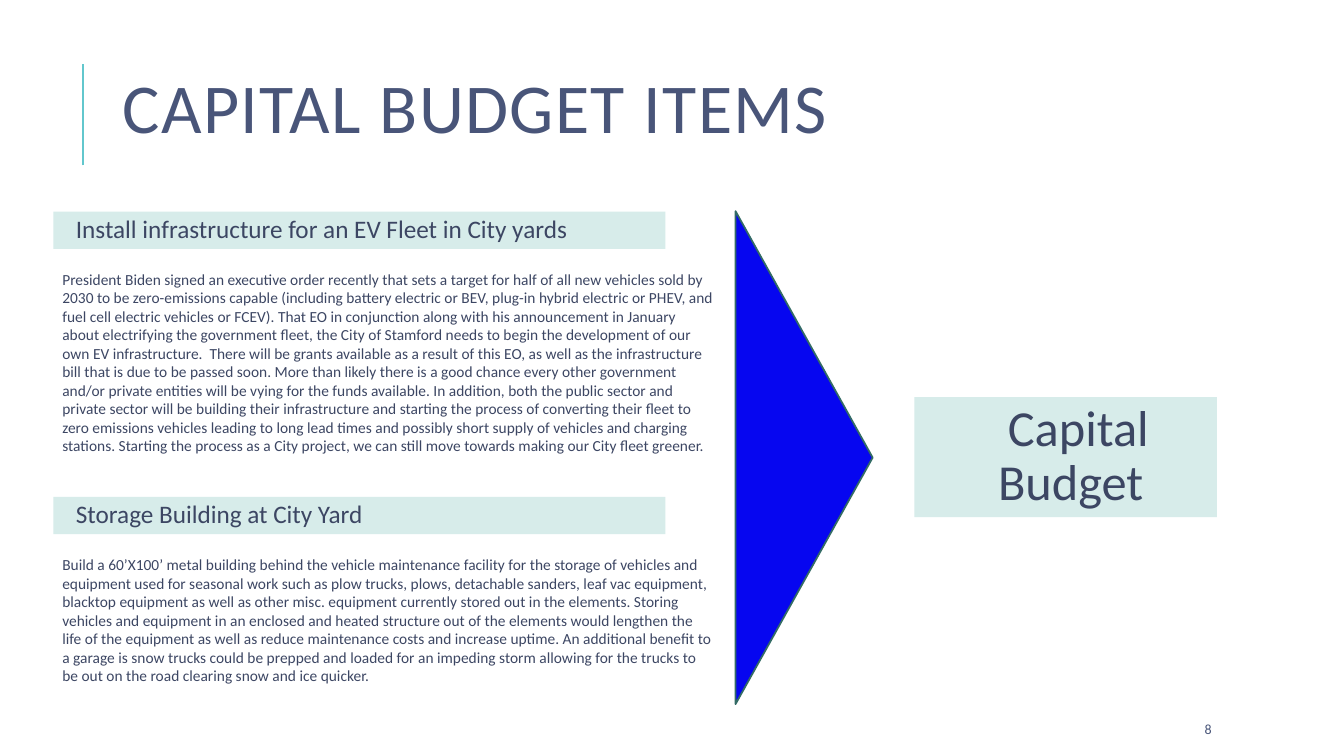
"""Build the capital budget slide: two items leading to one budget."""
from lxml import etree
from pptx import Presentation
from pptx.dml.color import RGBColor
from pptx.enum.shapes import MSO_CONNECTOR, MSO_SHAPE
from pptx.enum.text import MSO_ANCHOR, PP_ALIGN
from pptx.oxml.ns import qn
from pptx.util import Inches, Pt

LINE = MSO_CONNECTOR.STRAIGHT
RECT, WEDGE = MSO_SHAPE.RECTANGLE, MSO_SHAPE.ISOSCELES_TRIANGLE
TOP, MID = MSO_ANCHOR.TOP, MSO_ANCHOR.MIDDLE
LEFT, MIDDLE = PP_ALIGN.LEFT, PP_ALIGN.CENTER

TITLE = "CAPITAL BUDGET ITEMS"
GOAL = "Capital Budget"
PAGE = "8"
ITEMS = [
    (2.1, 1.95, "Install infrastructure for an EV Fleet in City yards", [
        "President Biden signed an executive order recently that sets a target for half of "
        "all new vehicles sold by 2030 to be zero-emissions capable (including battery "
        "electric or BEV, plug-in hybrid electric or PHEV, and fuel cell electric vehicles "
        "or FCEV).",
        "That EO in conjunction along with his announcement in January about electrifying "
        "the government fleet, the City of Stamford needs to begin the development of our "
        "own EV infrastructure. ",
        "There will be grants available as a result of this EO, as well as the "
        "infrastructure bill that is due to be passed soon.",
        "More than likely there is a good chance every other government and/or private "
        "entities will be vying for the funds available.",
        "In addition, both the public sector and private sector will be building their "
        "infrastructure and starting the process of converting their fleet to zero "
        "emissions vehicles leading to long lead times and possibly short supply of "
        "vehicles and charging stations.",
        "Starting the process as a City project, we can still move towards making our City "
        "fleet greener.",
    ]),
    (4.93, 1.4, "Storage Building at City Yard", [
        "Build a 60’X100’ metal building behind the vehicle maintenance facility for the "
        "storage of vehicles and equipment used for seasonal work such as plow trucks, "
        "plows, detachable sanders, leaf vac equipment, blacktop equipment as well as "
        "other misc. equipment currently stored out in the elements.",
        "Storing vehicles and equipment in an enclosed and heated structure out of the "
        "elements would lengthen the life of the equipment as well as reduce maintenance "
        "costs and increase uptime.",
        "An additional benefit to a garage is snow trucks could be prepped and loaded for "
        "an impeding storm allowing for the trucks to be out on the road clearing snow and "
        "ice quicker.",
    ]),
]

THEME = {
    "font": "Calibri",
    "title": (50, "495579"), "page": (10, "495579"), "goal": (36, "3C4663"),
    "head": (18, "3C4663"), "body": (11, "3C4663"),
    "band": "D7ECEA", "wedge": "0606F0", "edge": "336B65", "rule": "62C7CD",
}
WIDE, HIGH = 13.33, 7.5
COL, BAND, DROP = 0.53, 0.37, 0.53


def color(name):
    return RGBColor.from_string(THEME[name])


def put(obj, vals):
    for key, val in vals.items():
        setattr(obj, key, val)


def write(shape, text, role, anchor=TOP, align=LEFT, **form):
    size, tint = THEME[role]
    frame = shape.text_frame
    put(frame, {"word_wrap": True, "vertical_anchor": anchor})
    para = frame.paragraphs[0]
    put(para, {"alignment": align, **form})
    run = para.add_run()
    put(run, {"text": text})
    put(run.font, {"name": THEME["font"], "size": Pt(size)})
    run.font.color.rgb = RGBColor.from_string(tint)
    return para


def label(slide, box, text, role, anchor=TOP, **form):
    shape = slide.shapes.add_textbox(*map(Inches, box))
    return write(shape, text, role, anchor, **form)


def block(slide, kind, box, fill):
    shape = slide.shapes.add_shape(kind, *map(Inches, box))
    shape.shadow.inherit = False
    shape.fill.solid()
    shape.fill.fore_color.rgb = color(fill)
    shape.line.fill.background()
    return shape


def band(slide, box, text, role, anchor=TOP, align=LEFT):
    shape = block(slide, RECT, box, "band")
    para = write(shape, text, role, anchor, align, line_spacing=0.9, space_before=Pt(1))
    props = para._p.get_or_add_pPr()
    props.set("marL", str(Inches(0.1)))
    props.set("indent", str(Inches(-0.1)))
    etree.SubElement(props, qn("a:buChar")).set("char", " ")


def main():
    deck = Presentation()
    put(deck, {"slide_width": Inches(WIDE), "slide_height": Inches(HIGH)})
    slide = deck.slides.add_slide(deck.slide_layouts[6])

    rule = slide.shapes.add_connector(LINE, *map(Inches, (0.82, 1.64, 0.82, 0.64)))
    rule.line.color.rgb = color("rule")
    rule.line.width = Pt(1.5)
    etree.SubElement(rule._element.spPr, qn("a:effectLst"))

    head = label(slide, (1.12, 0.3, 10.93, 1.64), TITLE, "title", MID, line_spacing=0.8)
    head.runs[0].font._element.set("spc", "100")
    label(slide, (11.85, 7.08, 1.06, 0.3), PAGE, "page", MID)

    for top, tall, name, body in ITEMS:
        band(slide, (COL, top, 6.07, BAND), name, "head")
        label(slide, (COL - 0.01, top + DROP, 6.67, tall), " ".join(body), "body")

    wedge = block(slide, WEDGE, (5.53, 3.86, 4.89, 1.36), "wedge")
    wedge.rotation = 90
    wedge.line.color.rgb = color("edge")
    wedge.line.width = Pt(1.25)
    band(slide, (9.07, 3.94, 3, 1.19), GOAL, "goal", MID, MIDDLE)

    deck.save("out.pptx")


if __name__ == "__main__":
    main()
